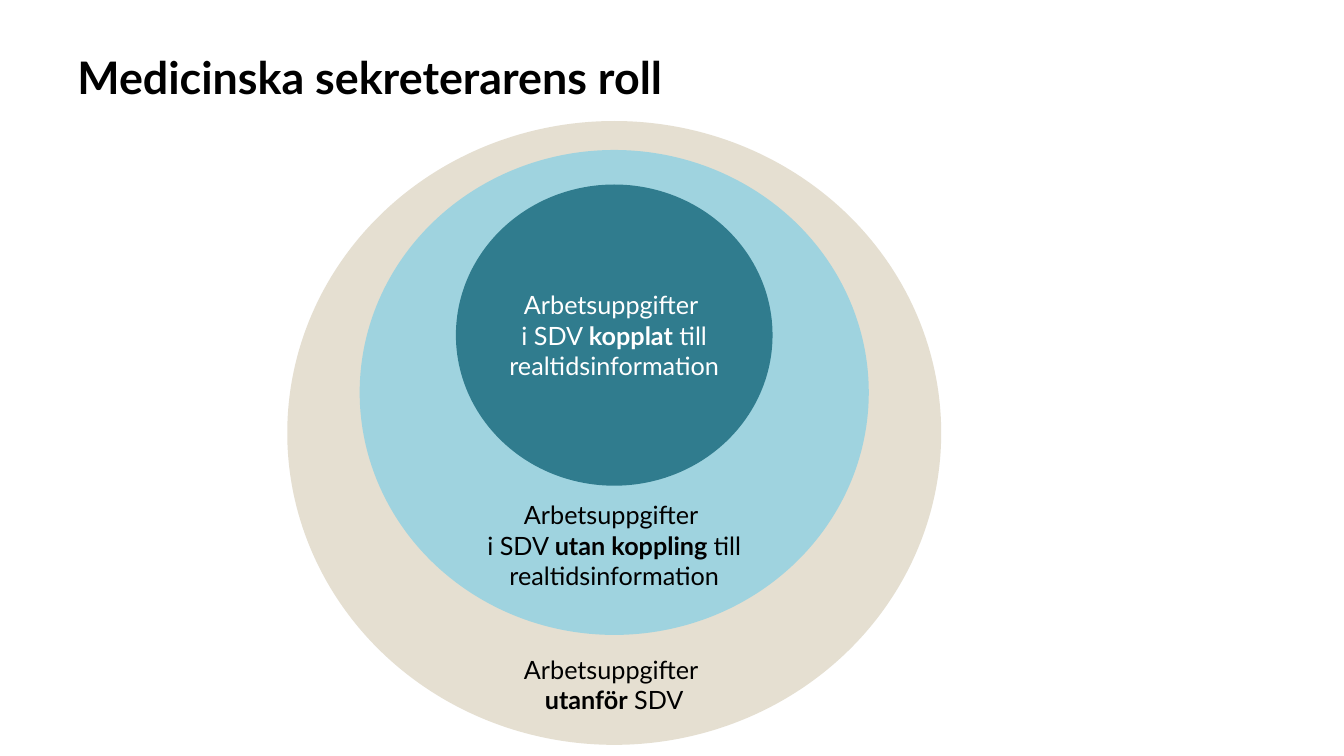
import pptx
import pptx.dml.color
import pptx.enum.shapes
import pptx.enum.text
import pptx.util

Cm, Pt = pptx.util.Cm, pptx.util.Pt
MIDDLE = pptx.enum.text.MSO_ANCHOR.MIDDLE
CENTER = pptx.enum.text.PP_ALIGN.CENTER

FONT = "Lato"
TITLE = "Medicinska sekreterarens roll"
CENTER_X = 15.48
LABEL_WIDTH = 8.94

# width, height, top (cm), fill
CIRCLES = [
    (16.48, 15.72, 3.05, "E5DFD1"),
    (12.83, 12.22, 3.78, "9FD3DF"),
    (7.98, 7.59, 4.65, "307C8E"),
]

# lines of (text, bold) runs
CORE_TEXT = [
    [("Arbetsuppgifter ", False)],
    [("i SDV ", False), ("kopplat", True), (" till realtidsinformation", False)],
]
# top, height (cm), lines
LABELS = [
    (12.47, 2.57, [
        [("Arbetsuppgifter ", False)],
        [("i SDV ", False), ("utan koppling ", True), ("till realtidsinformation", False)],
    ]),
    (16.36, 1.8, [
        [("Arbetsuppgifter ", False)],
        [("utanför", True), (" SDV", False)],
    ]),
]


def rgb(color):
    return pptx.dml.color.RGBColor.from_string(color)


def style(r, size, color, bold):
    r.font.name = FONT
    r.font.size = Pt(size)
    r.font.bold = bold
    r.font.color.rgb = rgb(color)


def write_centered(tf, lines, color):
    tf.word_wrap = True
    p = tf.paragraphs[0]
    p.alignment = CENTER
    for i, line in enumerate(lines):
        if i:
            p.add_line_break()
        for text, bold in line:
            r = p.add_run()
            r.text = text
            style(r, 18, color, bold)


def add_circle(s, width, height, top, fill):
    sp = s.shapes.add_shape(
        pptx.enum.shapes.MSO_SHAPE.OVAL,
        Cm(CENTER_X - width / 2), Cm(top), Cm(width), Cm(height))
    sp.shadow.inherit = False
    sp.fill.solid()
    sp.fill.fore_color.rgb = rgb(fill)
    sp.line.fill.background()
    return sp


prs = pptx.Presentation()
prs.slide_width, prs.slide_height = Cm(33.87), Cm(19.05)
s = prs.slides.add_slide(prs.slide_layouts[6])

tf = s.shapes.add_textbox(Cm(1.7), Cm(0.99), Cm(30.48), Cm(2.03)).text_frame
tf.word_wrap = True
p = tf.paragraphs[0]
p.text = TITLE
p.line_spacing = 1.1
style(p.runs[0], 32, "000000", True)

circles = [add_circle(s, *circle) for circle in CIRCLES]
tf = circles[-1].text_frame
tf.margin_left = tf.margin_right = tf.margin_top = tf.margin_bottom = 0
tf.vertical_anchor = MIDDLE
write_centered(tf, CORE_TEXT, "FFFFFF")

for top, height, lines in LABELS:
    sp = s.shapes.add_textbox(
        Cm(CENTER_X - LABEL_WIDTH / 2), Cm(top), Cm(LABEL_WIDTH), Cm(height))
    write_centered(sp.text_frame, lines, "000000")

prs.save("out.pptx")
